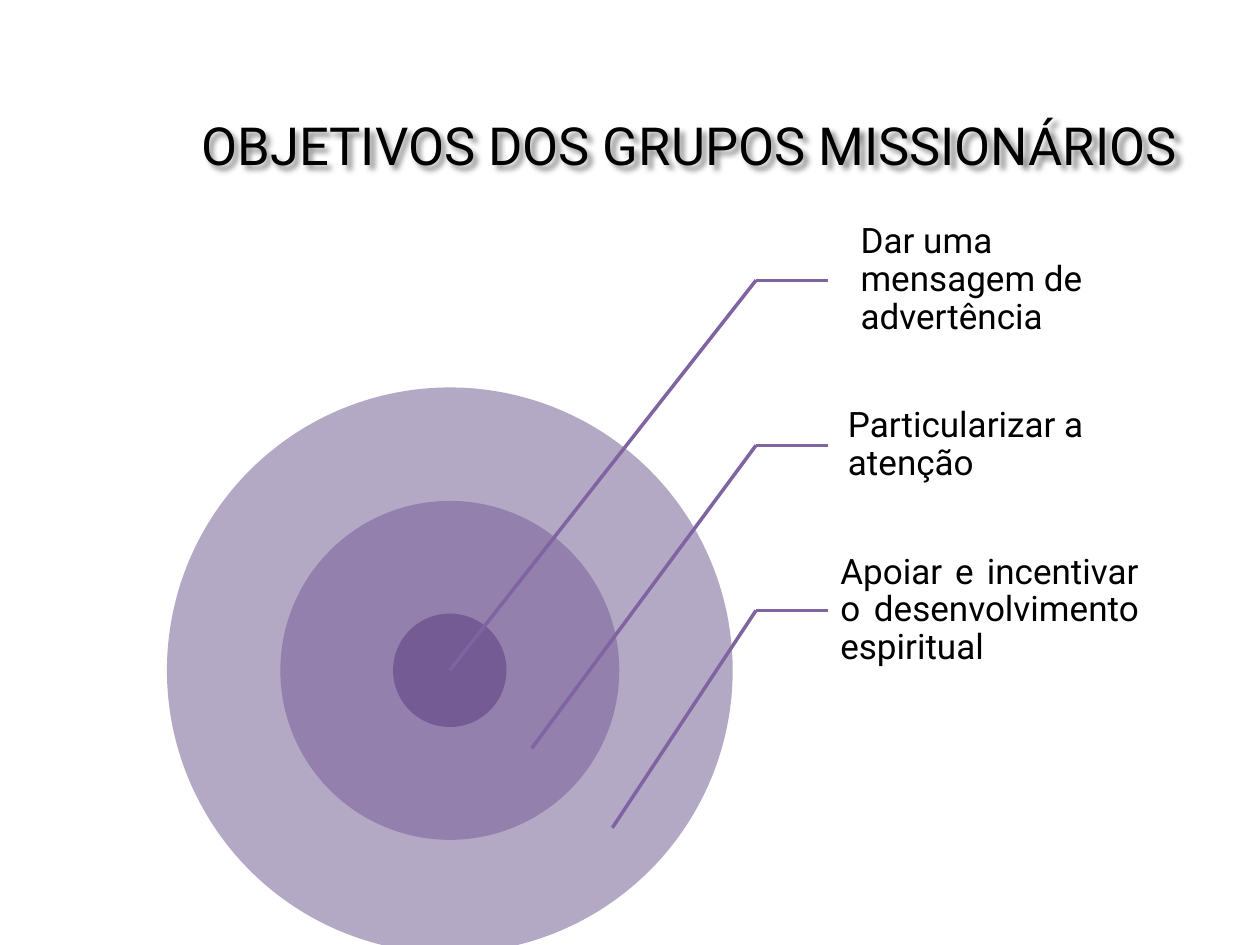
from lxml.etree import SubElement
from pptx import Presentation
from pptx.dml.color import RGBColor
from pptx.enum.shapes import MSO_CONNECTOR, MSO_SHAPE
from pptx.enum.text import MSO_ANCHOR, PP_ALIGN
from pptx.oxml import parse_xml
from pptx.oxml.ns import nsdecls, qn
from pptx.util import Inches, Pt

COLORS = {"text": "000000", "line": "8064A2"}
FONT = "Roboto"
TITLE = "OBJETIVOS DOS GRUPOS MISSIONÁRIOS"
CENTER = (3.57, 5.32)
RINGS = [(4.49, "B4A9C5"), (2.69, "9380AD"), (0.9, "745B93")]
GOALS = [
    {"text": "Dar uma mensagem de advertência", "left": 6.57, "width": 2.25,
     "indent": 0.1, "align": PP_ALIGN.LEFT, "target": CENTER},
    {"text": "Particularizar a atenção", "left": 6.57, "width": 2.25,
     "indent": 0, "align": PP_ALIGN.LEFT, "target": (4.22, 5.94)},
    {"text": "Apoiar e incentivar o desenvolvimento espiritual", "left": 6.31, "width": 2.76,
     "indent": 0.2, "align": PP_ALIGN.JUSTIFY, "target": (4.86, 6.57)},
]
TOP, ROW = 1.57, 1.31
ELBOW, LABEL = 6, 6.57
SHADOW = (f'<a:effectLst {nsdecls("a")}><a:outerShdw blurRad="38100" dist="38100" '
          'dir="2700000" algn="tl"><a:srgbClr val="000000"><a:alpha val="43000"/>'
          '</a:srgbClr></a:outerShdw></a:effectLst>')


def set_font(p, size):
    p.font.size = Pt(size)
    p.font.name = FONT
    p.font.color.rgb = RGBColor.from_string(COLORS["text"])


def add_title(s):
    title = s.shapes.title
    title.left, title.top, title.width, title.height = map(Inches, (1.38, 0.84, 8.19, 0.61))
    title.fill.background()
    title._element.spPr.append(parse_xml(SHADOW))
    title.text_frame.text = TITLE
    p = title.text_frame.paragraphs[0]
    p.alignment = PP_ALIGN.CENTER
    set_font(p, 30)


def add_ring(s, size, color):
    x, y = (c - size / 2 for c in CENTER)
    ring = s.shapes.add_shape(MSO_SHAPE.OVAL, Inches(x), Inches(y), Inches(size), Inches(size))
    ring.shadow.inherit = False
    ring.fill.solid()
    ring.fill.fore_color.rgb = RGBColor.from_string(color)
    ring.line.fill.background()


def add_line(s, start, end):
    line = s.shapes.add_connector(MSO_CONNECTOR.STRAIGHT, *map(Inches, start + end))
    line.line.color.rgb = RGBColor.from_string(COLORS["line"])
    line.line.width = Pt(2)
    SubElement(line._element.spPr, qn("a:effectLst"))


def add_goal(s, goal, top):
    box = s.shapes.add_textbox(*map(Inches, (goal["left"], top, goal["width"], ROW)))
    tf = box.text_frame
    tf.word_wrap = True
    tf.vertical_anchor = MSO_ANCHOR.MIDDLE
    tf.margin_left = Inches(0.16)
    tf.margin_right = tf.margin_top = tf.margin_bottom = Inches(0.03)
    tf.text = goal["text"]
    p = tf.paragraphs[0]
    p.alignment = goal["align"]
    p.line_spacing = 0.9
    p.space_after = Pt(7)
    pPr = p._p.get_or_add_pPr()
    pPr.set("marL", str(Inches(goal["indent"])))
    pPr.set("indent", "0")
    set_font(p, 20)
    elbow = (ELBOW, top + ROW / 2)
    add_line(s, elbow, (LABEL, elbow[1]))
    add_line(s, elbow, goal["target"])


def main():
    """Build the slide of concentric goals with their labels."""
    prs = Presentation()
    prs.slide_width, prs.slide_height = Inches(10), Inches(7.5)
    s = prs.slides.add_slide(prs.slide_layouts[5])
    add_title(s)
    for size, color in RINGS:
        add_ring(s, size, color)
    for i, goal in enumerate(GOALS):
        add_goal(s, goal, TOP + i * ROW)
    prs.save("out.pptx")


if __name__ == "__main__":
    main()
